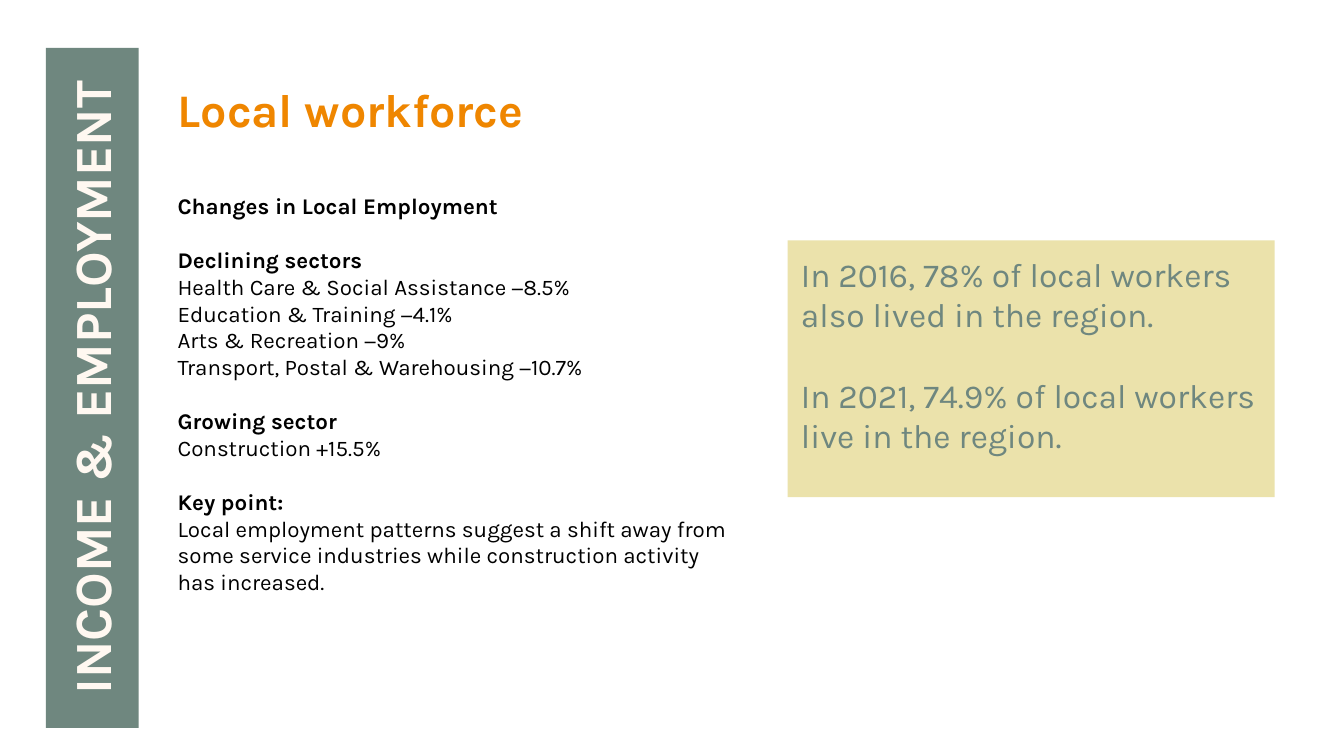
"""Build the local workforce slide with a vertical section banner."""
import pptx
import pptx.dml.color
import pptx.enum.shapes
import pptx.enum.text
import pptx.util

SLIDE = (10, 10 * 9 / 16)
THEME = {
    "font": "Karla",
    "orange": "EF8600", "sage": "6F877F", "cream": "FFF8F1",
    "sand": "EBE2AB", "black": "000000",
    "title": 25, "banner": 28, "callout": 18, "body": 12,
    "inset": 0.1, "blank_line": 1.2,
}
TITLE = "Local workforce"
BANNER = "INCOME & EMPLOYMENT"
CALLOUT = [
    ("", ["In 2016, 78% of local workers also lived in the region."]),
    ("", ["In 2021, 74.9% of local workers live in the region."]),
]
EMPLOYMENT = [
    ("Changes in Local Employment", []),
    ("Declining sectors", [
        "Health Care & Social Assistance −8.5%",
        "Education & Training −4.1%",
        "Arts & Recreation −9%",
        "Transport, Postal & Warehousing −10.7%",
    ]),
    ("Growing sector", ["Construction +15.5%"]),
    ("Key point:", [
        "Local employment patterns suggest a shift away from some service "
        "industries while construction activity has increased.",
    ]),
]
AREAS = {
    "title": (12.22, 8.36, 48.7, 11.56),
    "banner": (3.42, 6.31, 6.9, 89.96),
    "callout": (58.61, 31.82, 36.23, 33.96),
    "body": (12.23, 23.64, 43.2, 42.13),
}


def color(name):
    return pptx.dml.color.RGBColor.from_string(THEME[name])


def area(name):
    """Turn percentages of the slide into lengths."""
    return [pptx.util.Inches(share * SLIDE[i % 2] / 100)
            for i, share in enumerate(AREAS[name])]


def place(shape, box):
    for side, length in zip(("left", "top", "width", "height"), box):
        setattr(shape, side, length)


def panel(slide, box, fill):
    shape = slide.shapes.add_shape(pptx.enum.shapes.MSO_SHAPE.RECTANGLE, *box)
    shape.shadow.inherit = False
    shape.fill.solid()
    shape.fill.fore_color.rgb = color(fill)
    shape.line.fill.background()
    return shape


def write(shape, sections, size, ink, bold=False, align="LEFT", anchor="TOP"):
    """Write headed sections, set apart by the height of one line."""
    frame = shape.text_frame
    inset = pptx.util.Inches(THEME["inset"])
    frame_format = {
        "word_wrap": True,
        "auto_size": pptx.enum.text.MSO_AUTO_SIZE.NONE,
        "vertical_anchor": pptx.enum.text.MSO_ANCHOR[anchor],
        "margin_left": inset, "margin_right": inset,
        "margin_top": inset, "margin_bottom": inset,
    }
    for key, value in frame_format.items():
        setattr(frame, key, value)
    paragraph = None
    for heading, details in sections:
        lines = [(heading, True)] if heading else []
        lines += [(detail, bold) for detail in details]
        for i, (words, strong) in enumerate(lines):
            first = paragraph is None
            paragraph = frame.paragraphs[0] if first else frame.add_paragraph()
            paragraph.alignment = pptx.enum.text.PP_ALIGN[align]
            gap = 0 if first or i else THEME[size] * THEME["blank_line"]
            paragraph.space_before = pptx.util.Pt(gap)
            run = paragraph.add_run()
            run.text = words
            font_format = {"name": THEME["font"], "bold": strong,
                           "size": pptx.util.Pt(THEME[size])}
            for key, value in font_format.items():
                setattr(run.font, key, value)
            run.font.color.rgb = color(ink)


def main():
    deck = pptx.Presentation()
    deck.slide_width, deck.slide_height = map(pptx.util.Inches, SLIDE)
    slide = deck.slides.add_slide(deck.slide_layouts.get_by_name("Title Only"))

    title = slide.shapes.title
    place(title, area("title"))
    write(title, [("", [TITLE])], "title", "orange", bold=True, anchor="BOTTOM")

    left, top, width, height = area("banner")
    shift = (height - width) // 2
    banner = panel(slide, (left - shift, top + shift, height, width), "sage")
    banner.rotation = 270
    write(banner, [("", [BANNER])], "banner", "cream", bold=True, align="CENTER")

    callout = panel(slide, area("callout"), "sand")
    write(callout, CALLOUT, "callout", "sage")

    employment = slide.shapes.add_textbox(*area("body"))
    write(employment, EMPLOYMENT, "body", "black")

    deck.save("out.pptx")


if __name__ == "__main__":
    main()
